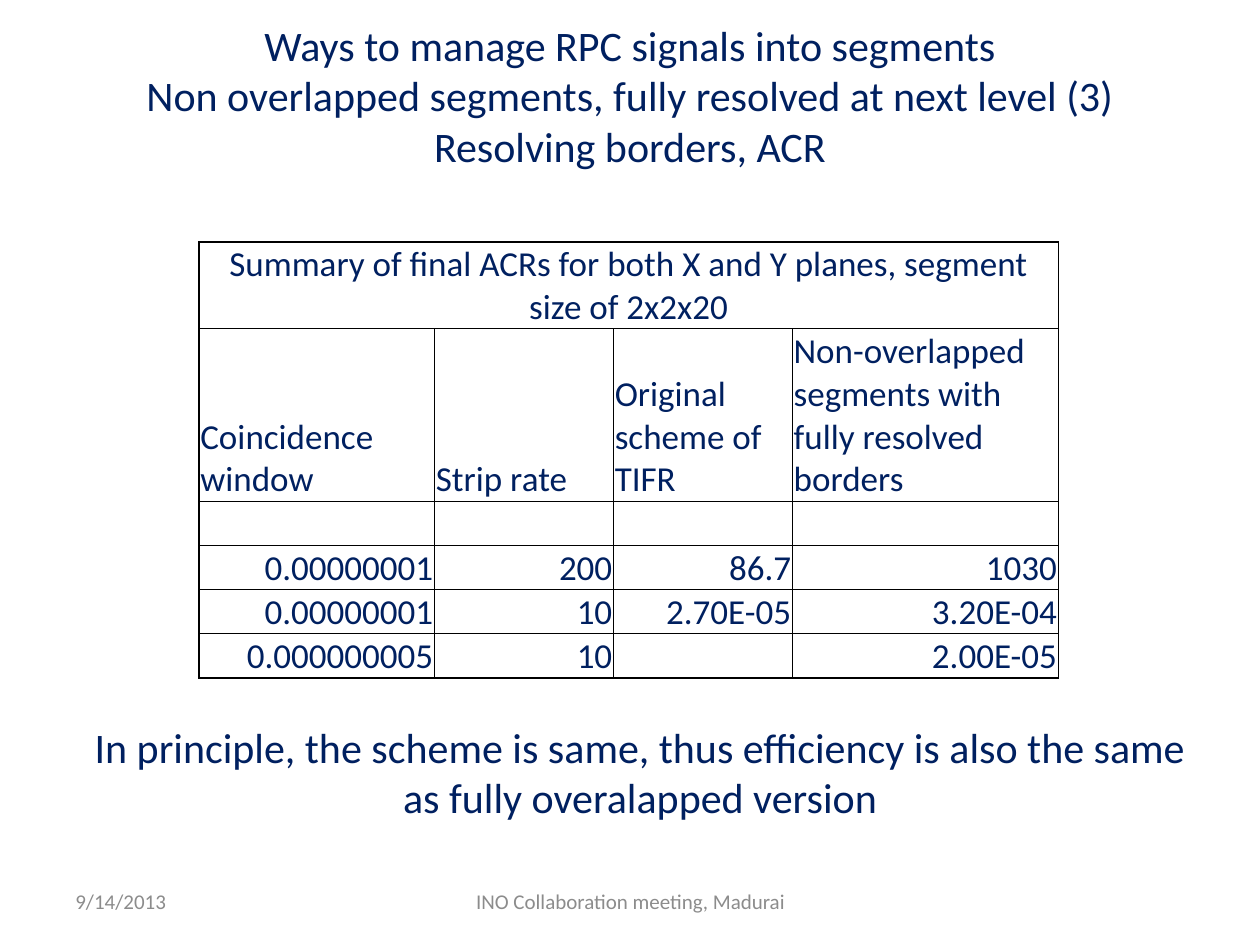
"""Build the slide on resolving segment borders, with its table of final ACRs."""
import pptx
import pptx.util
import pptx.dml.color
import pptx.enum.text
import pptx.oxml
import pptx.oxml.ns

Inches, Pt = pptx.util.Inches, pptx.util.Pt
ALIGN, ANCHOR = pptx.enum.text.PP_ALIGN, pptx.enum.text.MSO_ANCHOR
NAVY, GRAY = "002060", "8C8C8C"


def style(p, size, color, align):
    p.alignment = align
    p.font.name = "Calibri"
    p.font.size = Pt(size)
    p.font.color.rgb = pptx.dml.color.RGBColor.from_string(color)


def border(cell, widths):
    tc_pr = cell._tc.get_or_add_tcPr()
    for i, (side, width) in enumerate(zip("LRTB", widths)):
        tc_pr.insert(i, pptx.oxml.parse_xml(
            f'<a:ln{side} {pptx.oxml.ns.nsdecls("a")} w="{Pt(width)}">'
            f'<a:solidFill><a:srgbClr val="000000"/></a:solidFill></a:ln{side}>'))


prs = pptx.Presentation()
prs.slide_width, prs.slide_height = Inches(10), Inches(7.5)
s = prs.slides.add_slide(prs.slide_layouts[6])

texts = [
    ("9/14/2013", 0.5, 6.95, 2.33, 0.4, 12, GRAY, ALIGN.LEFT),
    ("INO Collaboration meeting, Madurai", 3.42, 6.95, 3.17, 0.4, 12, GRAY, ALIGN.CENTER),
    ("Ways to manage RPC signals into segments\v"
     "Non overlapped segments, fully resolved at next level (3) Resolving borders, ACR",
     0.5, 0.13, 9, 1.25, 24, NAVY, ALIGN.CENTER),
    ("In principle, the scheme is same, thus efficiency is also the same "
     "as fully overalapped version", 0.58, 5.5, 9, 1.25, 24, NAVY, ALIGN.CENTER),
]
for text, x, y, w, h, size, color, align in texts:
    tf = s.shapes.add_textbox(Inches(x), Inches(y), Inches(w), Inches(h)).text_frame
    tf.word_wrap = True
    tf.vertical_anchor = ANCHOR.MIDDLE
    p = tf.paragraphs[0]
    p.text = text
    style(p, size, color, align)

rows = [
    ["Summary of final ACRs for both X and Y planes, segment size of 2x2x20", "", "", ""],
    ["Coincidence window", "Strip rate", "Original scheme of TIFR",
     "Non-overlapped segments with fully resolved borders"],
    ["", "", "", ""],
    ["0.00000001", "200", "86.7", "1030"],
    ["0.00000001", "10", "2.70E-05", "3.20E-04"],
    ["0.000000005", "10", "", "2.00E-05"],
]
col_widths = [1.87, 1.42, 1.42, 2.11]
row_heights = [0.69, 1.37, 0.35, 0.35, 0.35, 0.35]
row_aligns = [ALIGN.CENTER, ALIGN.LEFT] + [ALIGN.RIGHT] * 4

table = s.shapes.add_table(len(rows), len(col_widths), Inches(1.58), Inches(1.92),
                           Inches(sum(col_widths)), Inches(sum(row_heights))).table
table.first_row = table.horz_banding = False
for column, width in zip(table.columns, col_widths):
    column.width = Inches(width)
for row, height in zip(table.rows, row_heights):
    row.height = Inches(height)

for i, values in enumerate(rows):
    for j, value in enumerate(values):
        cell = table.cell(i, j)
        cell.fill.background()
        cell.margin_left = cell.margin_right = cell.margin_top = Inches(0.01)
        cell.margin_bottom = 0
        cell.vertical_anchor = ANCHOR.BOTTOM
        p = cell.text_frame.paragraphs[0]
        p.text = value
        style(p, 20, NAVY, row_aligns[i])
        outer = (j == 0, j == len(values) - 1, i == 0, i == len(rows) - 1)
        border(cell, [1 if edge else 0.5 for edge in outer])
table.cell(0, 0).merge(table.cell(0, 3))

prs.save("out.pptx")
